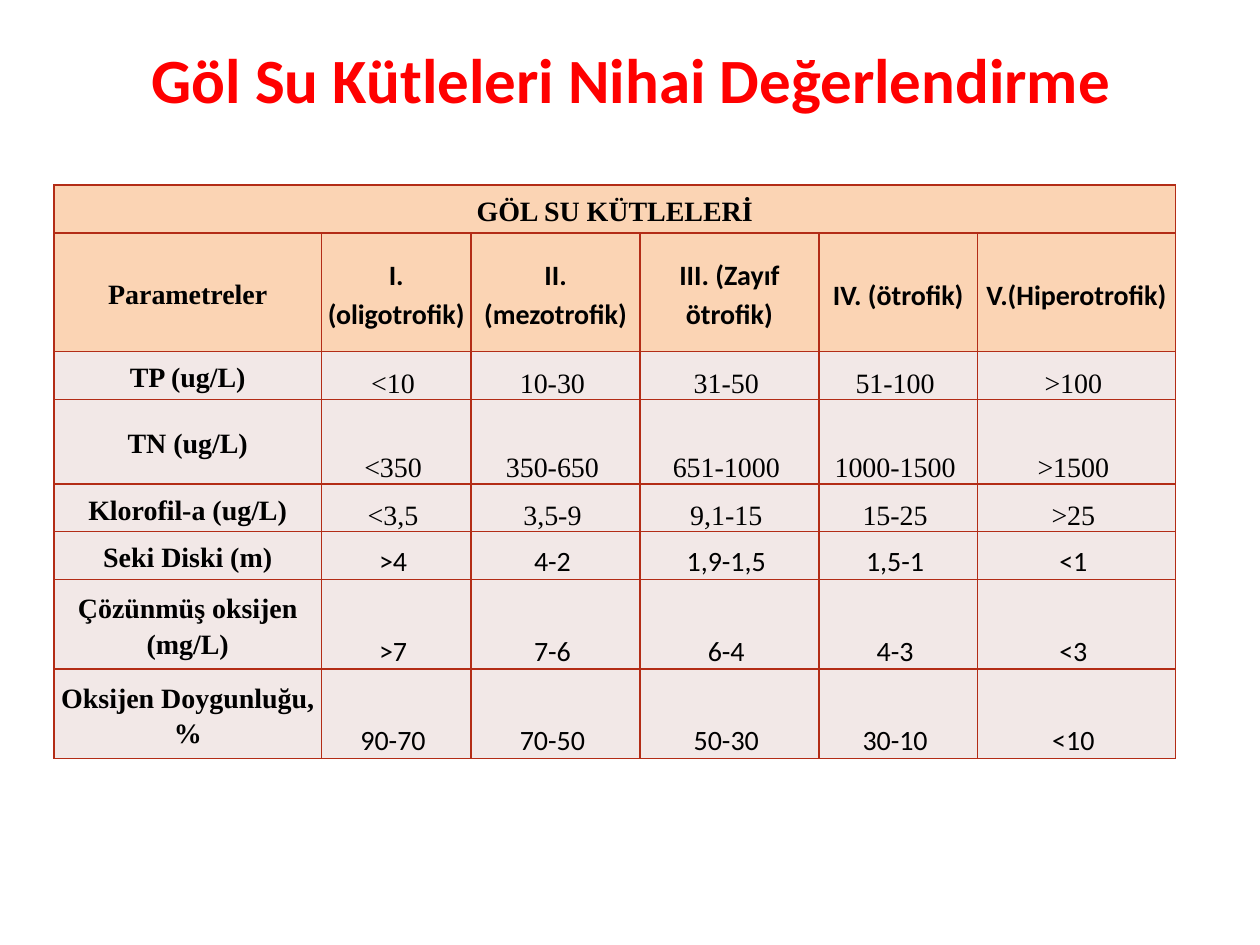
from lxml import etree
from pptx import Presentation
from pptx.dml.color import RGBColor
from pptx.enum.text import MSO_ANCHOR as Anchor, PP_ALIGN as Align
from pptx.oxml.ns import qn
from pptx.util import Inches, Pt

SERIF, SANS = "Times New Roman", "Calibri"
HEADER_FILL, BODY_FILL, BORDER = "FBD4B4", "F2E8E7", "B32C16"
COLUMN_WIDTHS = [2.12, 1.19, 1.34, 1.42, 1.26, 1.57]
ROW_HEIGHTS = [0.38, 0.94, 0.38, 0.67, 0.38, 0.38, 0.71, 0.71]
ROWS = [
    ["GÖL SU KÜTLELERİ"],
    ["Parametreler", "I. (oligotrofik)", "II. (mezotrofik)",
     "III. (Zayıf ötrofik)", "IV. (ötrofik)", "V.(Hiperotrofik)"],
    ["TP (ug/L)", "<10", "10-30", "31-50", "51-100", ">100"],
    ["TN (ug/L)", "<350", "350-650", "651-1000", "1000-1500", ">1500"],
    ["Klorofil-a (ug/L)", "<3,5", "3,5-9", "9,1-15", "15-25", ">25"],
    ["Seki Diski (m)", ">4", "4-2", "1,9-1,5", "1,5-1", "<1"],
    ["Çözünmüş oksijen (mg/L)", ">7", "7-6", "6-4", "4-3", "<3"],
    ["Oksijen Doygunluğu, %", "90-70", "70-50", "50-30", "30-10", "<10"],
]
HEADER_ROWS = 2
SANS_ROWS = {1, 5, 6, 7}


def write(para, text, color, **font_format):
    para.alignment = Align.CENTER
    span = para.add_run()
    span.text = text
    span.font.color.rgb = RGBColor.from_string(color)
    for name, value in font_format.items():
        setattr(span.font, name, value)


def add_borders(cell):
    """Draw the four edges; they must come before the fill in tcPr."""
    properties = cell._tc.get_or_add_tcPr()
    for position, edge in enumerate(("lnL", "lnR", "lnT", "lnB")):
        line = etree.Element(qn(f"a:{edge}"), w=str(Pt(1)))
        fill = etree.SubElement(line, qn("a:solidFill"))
        etree.SubElement(fill, qn("a:srgbClr"), val=BORDER)
        properties.insert(position, line)


deck = Presentation()
deck.slide_width, deck.slide_height = Inches(10), Inches(7.5)
page = deck.slides.add_slide(deck.slide_layouts[5])

title = page.shapes.title
title.left, title.top = Inches(0.51), Inches(0)
title.width, title.height = Inches(9), Inches(1.25)
title.text_frame.vertical_anchor = Anchor.MIDDLE
write(title.text_frame.paragraphs[0], "Göl Su Kütleleri Nihai Değerlendirme",
      "FF0000", name=SANS, size=Pt(36), bold=True)

table = page.shapes.add_table(
    len(ROWS), len(COLUMN_WIDTHS), Inches(0.43), Inches(1.47),
    Inches(sum(COLUMN_WIDTHS)), Inches(sum(ROW_HEIGHTS))).table
for column, width in zip(table.columns, COLUMN_WIDTHS):
    column.width = Inches(width)
for row, height in zip(table.rows, ROW_HEIGHTS):
    row.height = Inches(height)
table.cell(0, 0).merge(table.cell(0, len(COLUMN_WIDTHS) - 1))

for r, row in enumerate(table.rows):
    for c, cell in enumerate(row.cells):
        is_header = r < HEADER_ROWS
        is_value = not is_header and c > 0
        cell_format = {
            "vertical_anchor": Anchor.BOTTOM if is_value else Anchor.MIDDLE,
            "margin_left": Inches(0.01),
            "margin_right": Inches(0.06 if is_value else 0.01),
            "margin_top": Inches(0.01),
            "margin_bottom": Inches(0),
        }
        for name, value in cell_format.items():
            setattr(cell, name, value)
        cell.fill.solid()
        cell.fill.fore_color.rgb = RGBColor.from_string(
            HEADER_FILL if is_header else BODY_FILL)
        add_borders(cell)
        if c < len(ROWS[r]):
            para = cell.text_frame.paragraphs[0]
            para.line_spacing = 1.15
            write(para, ROWS[r][c], "000000", size=Pt(16), bold=not is_value,
                  name=SANS if c > 0 and r in SANS_ROWS else SERIF)

deck.save("out.pptx")
